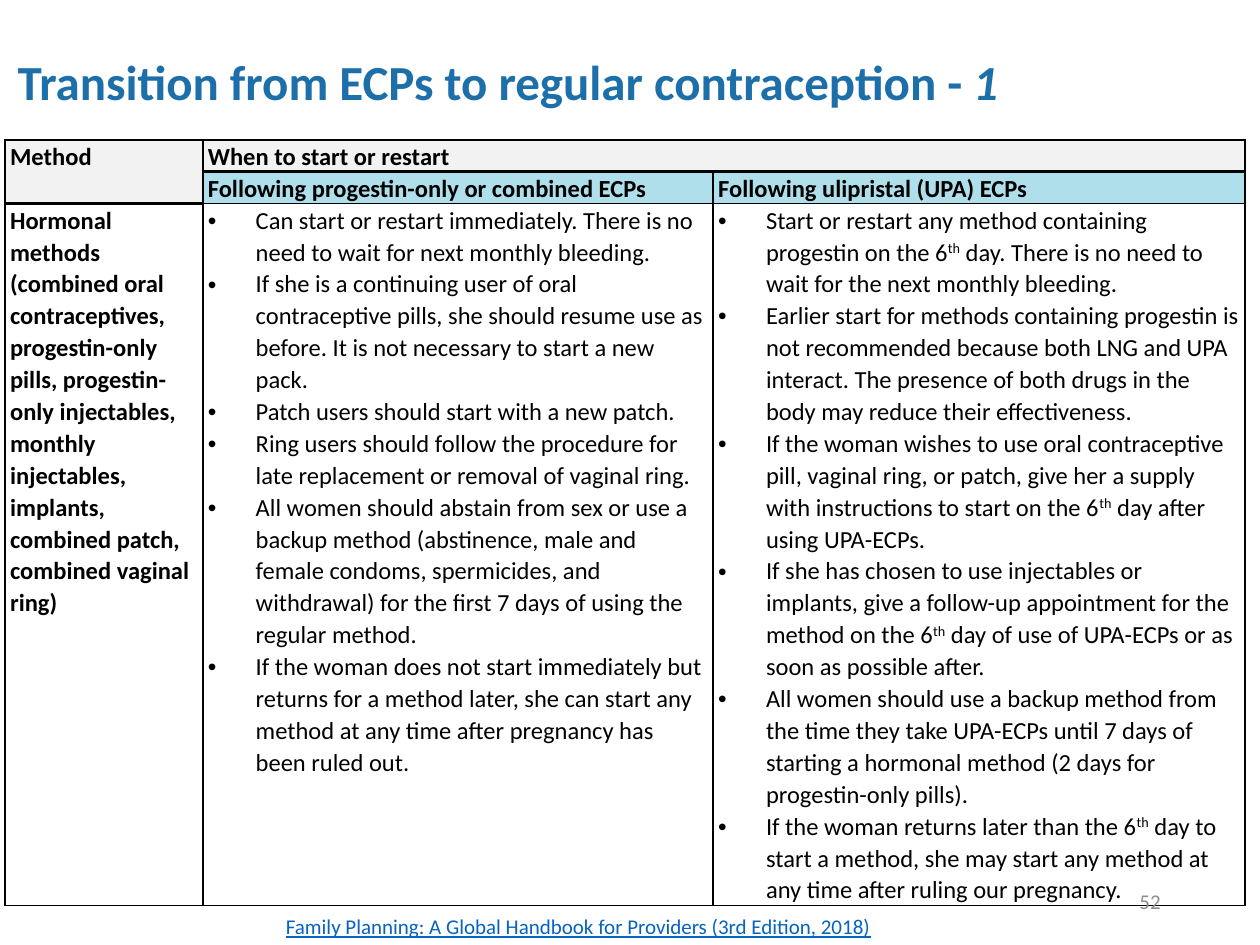
from lxml.etree import SubElement
from pptx import Presentation
from pptx.dml.color import RGBColor
from pptx.enum.text import MSO_ANCHOR, PP_ALIGN
from pptx.oxml.ns import qn
from pptx.util import Inches, Pt

BLACK, GREY, TEAL = "000000", "F2F2F2", "AFDFEB"


def rgb(code):
    return RGBColor.from_string(code)


def add_text(p, text, color=BLACK, **fmt):
    """Add runs to a paragraph; text between carets is superscript."""
    for i, part in enumerate(text.split("^")):
        r = p.add_run()
        r.text = part
        for name, value in {"name": "Calibri", "size": Pt(14), **fmt}.items():
            setattr(r.font, name, value)
        r.font.color.rgb = rgb(color)
        if i % 2:
            r.font._element.set("baseline", "30000")


prs = Presentation()
prs.slide_width, prs.slide_height = Inches(10), Inches(7.5)
s = prs.slides.add_slide(prs.slide_layouts[5])

# Title
title = s.shapes.title
box = {"left": 0.04, "top": 0.36, "width": 8.92, "height": 0.63}
for name, value in box.items():
    setattr(title, name, Inches(value))
tf = title.text_frame
tf.vertical_anchor = MSO_ANCHOR.MIDDLE
p = tf.paragraphs[0]
p.alignment, p.line_spacing = PP_ALIGN.LEFT, 0.9
heading = {"color": "1D6FA9", "size": Pt(28), "bold": True}
add_text(p, "Transition from ECPs to regular contraception - ", **heading)
add_text(p, "1", italic=True, **heading)

# Table content: (row, column) -> paragraphs
headers = {
    (0, 0): ["Method"],
    (0, 1): ["When to start or restart"],
    (1, 1): ["Following progestin-only or combined ECPs"],
    (1, 2): ["Following ulipristal (UPA) ECPs"],
    (2, 0): [
        "Hormonal methods (combined oral",
        "contraceptives, progestin-only pills, progestin-only injectables, "
        "monthly injectables, implants, combined patch,",
        "combined vaginal ring)",
    ],
}
lists = {
    (2, 1): [
        "Can start or restart immediately. There is no need to wait for next monthly bleeding.",
        "If she is a continuing user of oral contraceptive pills, she should resume use as "
        "before. It is not necessary to start a new pack.",
        "Patch users should start with a new patch.",
        "Ring users should follow the procedure for late replacement or removal of vaginal ring.",
        "All women should abstain from sex or use a backup method (abstinence, male and female "
        "condoms, spermicides, and withdrawal) for the first 7 days of using the regular method.",
        "If the woman does not start immediately but returns for a method later, she can start "
        "any method at any time after pregnancy has been ruled out.",
    ],
    (2, 2): [
        "Start or restart any method containing progestin on the 6^th^ day. There is no need "
        "to wait for the next monthly bleeding.",
        "Earlier start for methods containing progestin is not recommended because both LNG "
        "and UPA interact. The presence of both drugs in the body may reduce their effectiveness.",
        "If the woman wishes to use oral contraceptive pill, vaginal ring, or patch, give her a "
        "supply with instructions to start on the 6^th^ day after using UPA-ECPs.",
        "If she has chosen to use injectables or implants, give a follow-up appointment for the "
        "method on the 6^th^ day of use of UPA-ECPs or as soon as possible after.",
        "All women should use a backup method from the time they take UPA-ECPs until 7 days of "
        "starting a hormonal method (2 days for progestin-only pills).",
        "If the woman returns later than the 6^th^ day to start a method, she may start any "
        "method at any time after ruling our pregnancy.",
    ],
}

# Table grid
cols, rows = [1.57, 4.05, 4.22], [0.25, 0.25, 5.57]
frame = s.shapes.add_table(len(rows), len(cols), Inches(0.04), Inches(1.11),
                           Inches(sum(cols)), Inches(sum(rows)))
table = frame.table
table.first_row = table.horz_banding = False
for col, width in zip(table.columns, cols):
    col.width = Inches(width)
for row, height in zip(table.rows, rows):
    row.height = Inches(height)

# Cell borders and fills
for r, row in enumerate(table.rows):
    for c, cell in enumerate(row.cells):
        tcPr = cell._tc.get_or_add_tcPr()
        for side in "LRTB":
            heavy = side == "B" and (r == 0 or (r, c) == (1, 0))
            ln = SubElement(tcPr, qn(f"a:ln{side}"), w=str(Pt(2 if heavy else 1)))
            SubElement(SubElement(ln, qn("a:solidFill")), qn("a:srgbClr"), val=BLACK)
        if r == 2:
            cell.fill.background()
        else:
            cell.fill.solid()
            cell.fill.fore_color.rgb = rgb(TEAL if r == 1 and c else GREY)
        cell.margin_left = cell.margin_right = Inches(0.04)
        cell.margin_top = cell.margin_bottom = 0
table.cell(0, 0).merge(table.cell(1, 0))
table.cell(0, 1).merge(table.cell(0, 2))

# Cell text
for (r, c), texts in {**headers, **lists}.items():
    tf = table.cell(r, c).text_frame
    bulleted = (r, c) in lists
    for i, text in enumerate(texts):
        p = tf.add_paragraph() if i else tf.paragraphs[0]
        p.line_spacing = 1.07
        add_text(p, text, bold=not bulleted)
        if bulleted:
            pPr = p._p.get_or_add_pPr()
            pPr.set("marL", str(Inches(0.38)))
            pPr.set("indent", str(-Inches(0.38)))
            SubElement(pPr, qn("a:buFont"), typeface="Arial")
            SubElement(pPr, qn("a:buChar"), char="•")

# Source line and slide number
footers = [
    ((2.17, 7.2, 5.66, 0.24), "Family Planning: A Global Handbook for Providers (3rd Edition, 2018)",
     "0563C1", PP_ALIGN.LEFT, MSO_ANCHOR.TOP, True),
    ((7.06, 6.95, 2.25, 0.4), "52", "8C8C8C", PP_ALIGN.RIGHT, MSO_ANCHOR.MIDDLE, False),
]
for place, text, color, align, anchor, underline in footers:
    tf = s.shapes.add_textbox(*map(Inches, place)).text_frame
    tf.word_wrap, tf.vertical_anchor = True, anchor
    tf.paragraphs[0].alignment = align
    add_text(tf.paragraphs[0], text, color, size=Pt(12), underline=underline)

prs.save("out.pptx")
